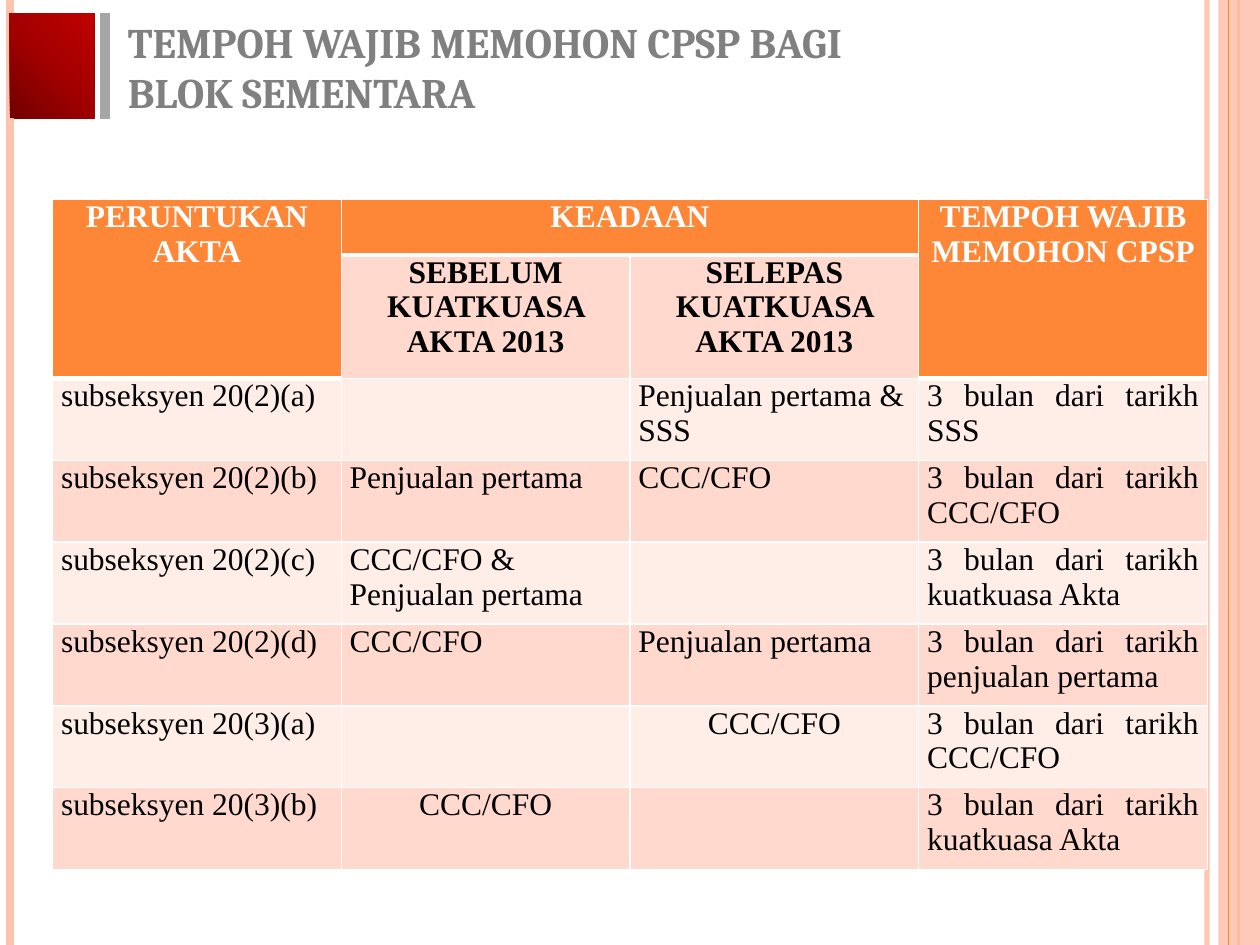
import copy
from dataclasses import dataclass

import pptx
import pptx.dml.color
import pptx.enum.shapes
import pptx.enum.text
import pptx.oxml
import pptx.oxml.ns
import pptx.util
from lxml import etree

Cm = pptx.util.Cm
Pt = pptx.util.Pt
Align = pptx.enum.text.PP_ALIGN
qn = pptx.oxml.ns.qn


@dataclass(frozen=True)
class Theme:
    peach: str = "FEC3AE"
    orange: str = "FE8637"
    dark: str = "FFD9CE"
    light: str = "FFEDE8"
    white: str = "FFFFFF"
    black: str = "000000"
    grey: str = "808080"
    bar: str = "A6A6A6"
    reds: tuple = ("720000", "A20000", "C00000")
    serif: str = "Times New Roman"
    head: str = "Cambria"
    body_size: int = 18
    head_size: int = 24


THEME = Theme()
ALIGNS = {"l": Align.LEFT, "c": Align.CENTER, "j": Align.JUSTIFY}
WIDTH, HEIGHT = 25.4, 19.05
COL = 5.82
ROWS = [1.12, 2.49] + [1.65] * 6

# Cell: (text, alignment); a line break starts a new paragraph.
HEADER = [
    [("PERUNTUKAN AKTA", "c"), ("KEADAAN", "c"), None,
     ("TEMPOH WAJIB MEMOHON CPSP", "c")],
    [None, ("SEBELUM KUATKUASA AKTA 2013", "c"),
     ("SELEPAS KUATKUASA AKTA 2013", "c"), None],
]
BODY = [
    [("subseksyen 20(2)(a)", "j"), None, ("Penjualan pertama &\nSSS", "l"),
     ("3 bulan dari tarikh SSS", "j")],
    [("subseksyen 20(2)(b)", "l"), ("Penjualan pertama", "l"),
     ("CCC/CFO", "l"), ("3 bulan dari tarikh CCC/CFO", "j")],
    [("subseksyen 20(2)(c)", "l"), ("CCC/CFO &\nPenjualan pertama", "l"),
     None, ("3 bulan dari tarikh kuatkuasa Akta", "j")],
    [("subseksyen 20(2)(d)", "l"), ("CCC/CFO", "l"),
     ("Penjualan pertama", "l"),
     ("3 bulan dari tarikh penjualan pertama", "j")],
    [("subseksyen 20(3)(a)", "j"), None, ("CCC/CFO", "c"),
     ("3 bulan dari tarikh CCC/CFO", "j")],
    [("subseksyen 20(3)(b)", "l"), ("CCC/CFO", "c"), None,
     ("3 bulan dari tarikh kuatkuasa Akta", "j")],
]


def rgb(hue):
    return pptx.dml.color.RGBColor.from_string(hue)


def fade(node, percent):
    """Set the opacity of every solid colour under node."""
    for hue in node.iter(qn("a:srgbClr")):
        etree.SubElement(hue, qn("a:alpha"), val=str(percent * 1000))


def rule(slide, x, top, end, hue, width, alpha=100):
    """Draw a vertical line."""
    line = slide.shapes.add_connector(
        pptx.enum.shapes.MSO_CONNECTOR.STRAIGHT,
        Cm(x), Cm(top), Cm(x), Cm(end))
    line.line.color.rgb = rgb(hue)
    line.line.width = Pt(width)
    props = line._element.spPr
    etree.SubElement(props, qn("a:effectLst"))
    if alpha < 100:
        fade(props, alpha)


def block(slide, x, y, w, h):
    box = slide.shapes.add_shape(
        pptx.enum.shapes.MSO_SHAPE.RECTANGLE, Cm(x), Cm(y), Cm(w), Cm(h))
    box.shadow.inherit = False
    box.line.fill.background()
    return box


def blend(box, hues):
    """Fill with evenly spaced colours, rising from lower left."""
    box.fill.gradient()
    box.fill.gradient_angle = 45
    stops = box._element.spPr.find(qn("a:gradFill")).find(qn("a:gsLst"))
    stops.insert(1, copy.deepcopy(stops[0]))
    for i, (stop, hue) in enumerate(zip(box.fill.gradient_stops, hues)):
        stop.color.rgb = rgb(hue)
        stop.position = i / (len(hues) - 1)


def write(para, text, font, size, hue, bold):
    run = para.add_run()
    run.text = text
    run.font.name = font
    run.font.size = Pt(size)
    run.font.color.rgb = rgb(hue)
    run.font.bold = bold


def edge(cell, base):
    """Give a cell white borders; base is the width of the lower one."""
    props = cell._tc.get_or_add_tcPr()
    for side, width in (("L", 1), ("R", 1), ("T", 1), ("B", base)):
        line = etree.SubElement(props, qn("a:ln" + side), w=str(Pt(width)))
        fill = etree.SubElement(line, qn("a:solidFill"))
        etree.SubElement(fill, qn("a:srgbClr"), val=THEME.white)


def fill_cell(cell, item, back, hue, bold, base):
    edge(cell, base)
    cell.fill.solid()
    cell.fill.fore_color.rgb = rgb(back)
    cell.margin_left = cell.margin_right = Cm(0.17)
    cell.margin_top = cell.margin_bottom = 0
    if item is None:
        return
    text, side = item
    frame = cell.text_frame
    for i, part in enumerate(text.split("\n")):
        para = frame.add_paragraph() if i else frame.paragraphs[0]
        para.alignment = ALIGNS[side]
        write(para, part, THEME.serif, THEME.body_size, hue, bold)


def add_grid(slide):
    data = HEADER + BODY
    grid = slide.shapes.add_table(
        len(data), 4, Cm(1.06), Cm(4.02), Cm(4 * COL), Cm(sum(ROWS))).table
    grid.first_row = grid.horz_banding = False
    for col in grid.columns:
        col.width = Cm(COL)
    for row, high in zip(grid.rows, ROWS):
        row.height = Cm(high)
    for r, items in enumerate(data):
        for c, item in enumerate(items):
            top = r == 0 or (r == 1 and c in (0, 3))
            band = THEME.dark if r % 2 else THEME.light
            fill_cell(grid.cell(r, c), item,
                      THEME.orange if top else band,
                      THEME.white if top else THEME.black,
                      r < len(HEADER), 3 if top else 1)
    for first, last in (((0, 0), (1, 0)), ((0, 1), (0, 2)), ((0, 3), (1, 3))):
        grid.cell(*first).merge(grid.cell(*last))


def add_frame(slide):
    """Draw the stripes down both sides of the slide."""
    rule(slide, 24.33, 0, HEIGHT, THEME.peach, 3, 93)
    rule(slide, 0.2, 0, HEIGHT, THEME.peach, 4.5)
    rule(slide, 24.97, 0, HEIGHT, THEME.orange, 1.5)
    band = block(slide, 24.56, 0, 0.84, HEIGHT)
    band.fill.solid()
    band.fill.fore_color.rgb = rgb(THEME.peach)
    fade(band._element.spPr, 87)
    rule(slide, 24.77, 0, HEIGHT, THEME.orange, 0.75)


def add_title(slide):
    blend(block(slide, 0.2, 0.27, 1.7, 2.12), THEME.reds)
    rule(slide, 2.12, 0.27, 2.39, THEME.bar, 6)
    box = slide.shapes.add_textbox(Cm(2.33), Cm(0.2), Cm(15.04), Cm(2.31))
    box.text_frame.word_wrap = True
    write(box.text_frame.paragraphs[0],
          "TEMPOH WAJIB MEMOHON CPSP BAGI BLOK SEMENTARA",
          THEME.head, THEME.head_size, THEME.grey, True)


def main():
    deck = pptx.Presentation()
    deck.slide_width, deck.slide_height = Cm(WIDTH), Cm(HEIGHT)
    slide = deck.slides.add_slide(deck.slide_layouts[6])
    add_frame(slide)
    add_grid(slide)
    add_title(slide)
    deck.save("out.pptx")


if __name__ == "__main__":
    main()
